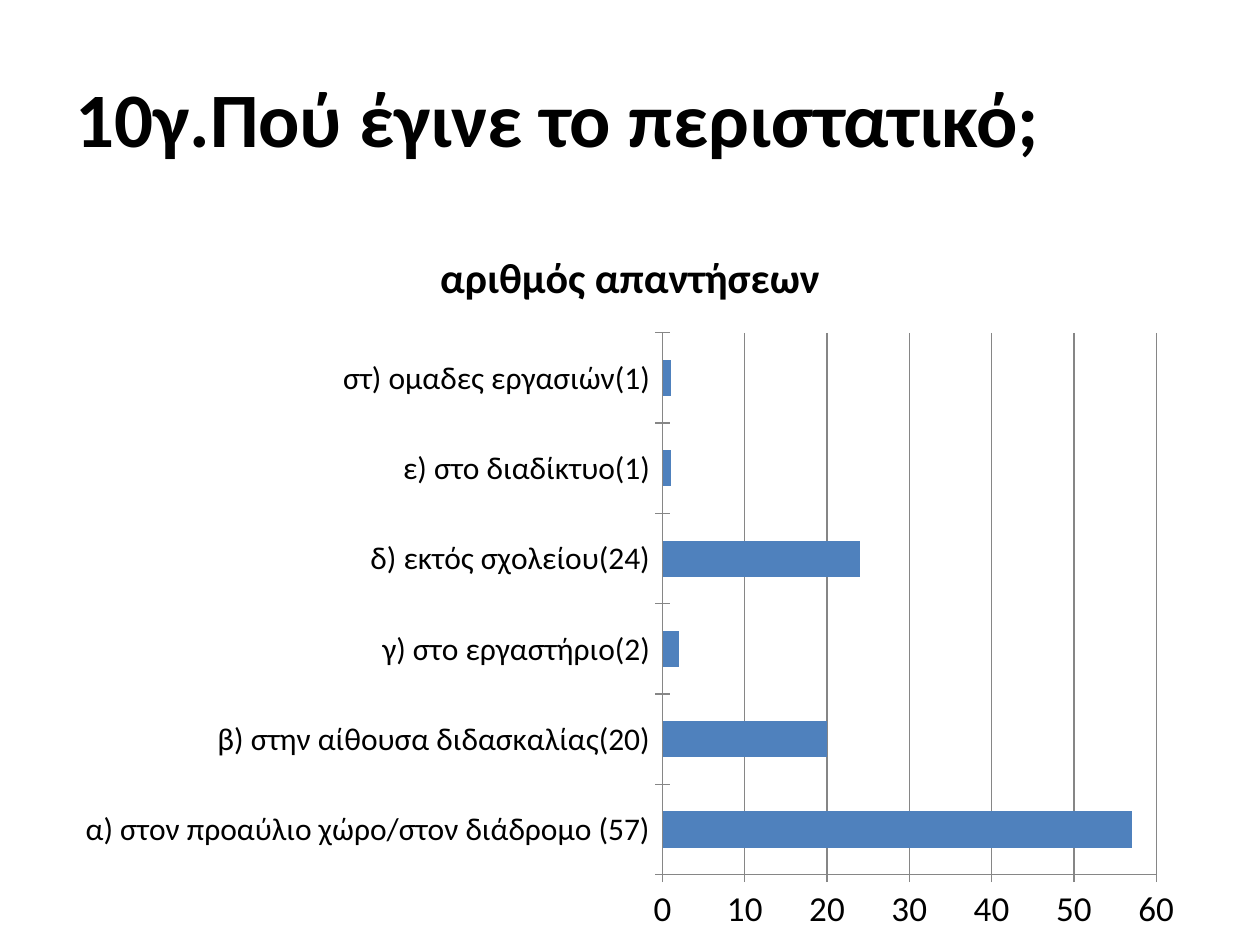
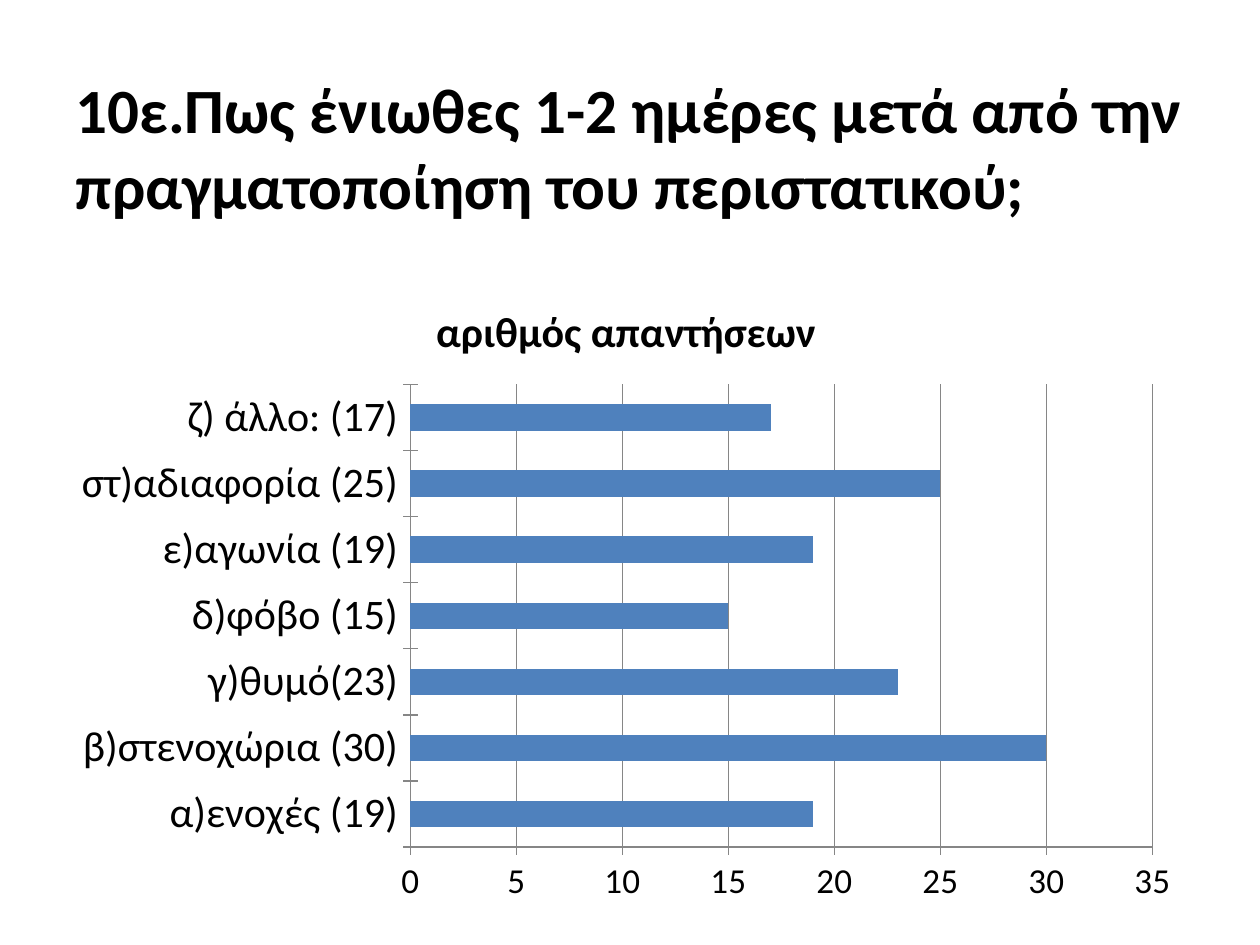
"""Build two survey slides, each with a title and a bar chart."""
from dataclasses import dataclass

from pptx import Presentation
from pptx.chart.data import CategoryChartData
from pptx.dml.color import RGBColor
from pptx.enum.chart import XL_CHART_TYPE, XL_TICK_MARK
from pptx.enum.text import MSO_ANCHOR, PP_ALIGN
from pptx.util import Cm, Pt


@dataclass(frozen=True)
class Theme:
    """Hold the shared font, colours and type sizes."""
    font: str = "Calibri"
    ink: RGBColor = RGBColor(0, 0, 0)
    bar: RGBColor = RGBColor(0x4F, 0x81, 0xBD)
    rule: RGBColor = RGBColor(0x86, 0x86, 0x86)
    base: int = 10
    head: int = 24
    scale: int = 20
    line: float = 0.75


@dataclass(frozen=True)
class Box:
    """Hold a place on the slide in centimetres."""
    left: float
    top: float
    width: float
    height: float

    def place(self) -> tuple[Cm, Cm, Cm, Cm]:
        """Return left, top, width and height as lengths."""
        return Cm(self.left), Cm(self.top), Cm(self.width), Cm(self.height)


@dataclass(frozen=True)
class Survey:
    """Describe one question and its answers."""
    title: str
    size: int
    head: Box
    plot: Box
    label: int
    answers: dict[str, int]


THEME = Theme()
SERIES = "αριθμός απαντήσεων"
SURVEYS = (
    Survey(
        "10γ.Πού έγινε το περιστατικό;", 44,
        Box(1.27, 0.76, 22.86, 3.18), Box(1.27, 4.45, 22.86, 14.6), 18,
        {
            "α) στον προαύλιο χώρο/στον διάδρομο (57)": 57,
            "β) στην αίθουσα διδασκαλίας(20)": 20,
            "γ) στο εργαστήριο(2)": 2,
            "δ) εκτός σχολείου(24)": 24,
            "ε) στο διαδίκτυο(1)": 1,
            "στ) ομαδες εργασιών(1)": 1,
        },
    ),
    Survey(
        "10ε.Πως ένιωθες 1-2 ημέρες μετά από την πραγματοποίηση του περιστατικού;", 36,
        Box(1.27, 0.76, 22.86, 4.39), Box(1.19, 5.56, 22.86, 12.9), 24,
        {
            "α)ενοχές (19)": 19,
            "β)στενοχώρια (30)": 30,
            "γ)θυμό(23)": 23,
            "δ)φόβο (15)": 15,
            "ε)αγωνία (19)": 19,
            "στ)αδιαφορία (25)": 25,
            "ζ) άλλο: (17)": 17,
        },
    ),
)


def style(font, size: int, bold: bool = False) -> None:
    """Apply the shared face and colour at a given size."""
    font.name, font.size, font.bold = THEME.font, Pt(size), bold
    font.color.rgb = THEME.ink


def rule(line) -> None:
    """Draw a thin grey chart line."""
    line.color.rgb = THEME.rule
    line.width = Pt(THEME.line)


def write(frame, text: str, size: int) -> None:
    """Write one bold run into a text frame."""
    run = frame.paragraphs[0].add_run()
    run.text = text
    style(run.font, size, bold=True)


def add_title(slide, survey: Survey) -> None:
    """Place and fill the title."""
    title = slide.shapes.title
    title.left, title.top, title.width, title.height = survey.head.place()
    frame = title.text_frame
    frame.word_wrap = True
    frame.vertical_anchor = MSO_ANCHOR.MIDDLE
    frame.paragraphs[0].alignment = PP_ALIGN.LEFT
    write(frame, survey.title, survey.size)


def add_bars(slide, survey: Survey) -> None:
    """Add the bar chart of the answers."""
    data = CategoryChartData()
    data.categories = list(survey.answers)
    data.add_series(SERIES, list(survey.answers.values()))
    chart = slide.shapes.add_chart(
        XL_CHART_TYPE.BAR_CLUSTERED, *survey.plot.place(), data).chart
    style(chart.font, THEME.base)
    chart.has_legend = False
    chart.has_title = True
    chart.chart_title.include_in_layout = False
    write(chart.chart_title.text_frame, SERIES, THEME.head)
    for axis, size in ((chart.category_axis, survey.label),
                       (chart.value_axis, THEME.scale)):
        style(axis.tick_labels.font, size)
        axis.major_tick_mark = XL_TICK_MARK.CROSS
        rule(axis.format.line)
    chart.value_axis.has_major_gridlines = True
    rule(chart.value_axis.major_gridlines.format.line)
    plot = chart.plots[0]
    plot.gap_width = 150
    plot.vary_by_categories = False
    fill = plot.series[0].format.fill
    fill.solid()
    fill.fore_color.rgb = THEME.bar


def main() -> None:
    """Build and save the deck."""
    deck = Presentation()
    deck.slide_width, deck.slide_height = Cm(25.4), Cm(19.05)
    for survey in SURVEYS:
        slide = deck.slides.add_slide(deck.slide_layouts.get_by_name("Title Only"))
        add_title(slide, survey)
        add_bars(slide, survey)
    deck.save("out.pptx")


if __name__ == "__main__":
    main()
